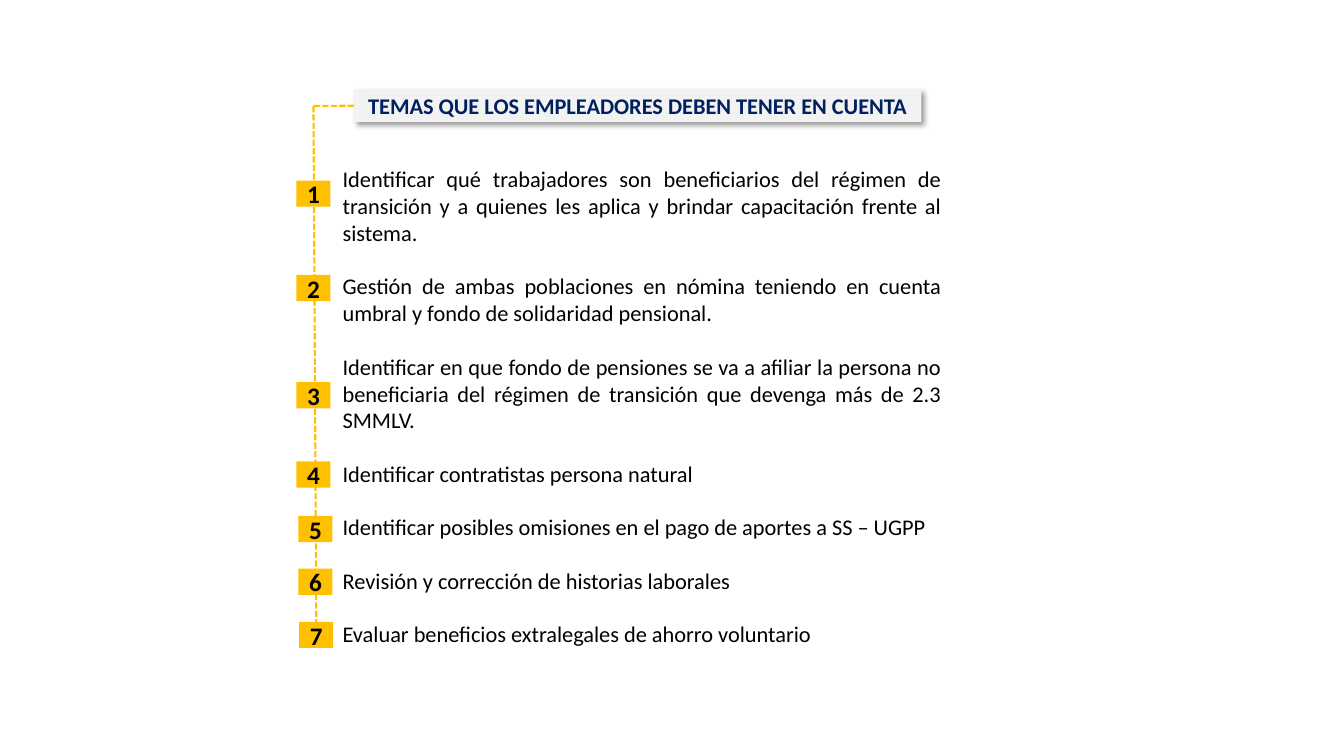
from lxml import etree
from pptx import Presentation
from pptx.dml.color import RGBColor
from pptx.enum.dml import MSO_LINE
from pptx.enum.shapes import MSO_CONNECTOR, MSO_SHAPE
from pptx.enum.text import MSO_ANCHOR, MSO_AUTO_SIZE, PP_ALIGN
from pptx.oxml import parse_xml
from pptx.oxml.ns import qn
from pptx.util import Cm, Pt

RECT = MSO_SHAPE.RECTANGLE
LINE = MSO_CONNECTOR.STRAIGHT
DASH = MSO_LINE.SQUARE_DOT
MIDDLE = MSO_ANCHOR.MIDDLE
FIXED = MSO_AUTO_SIZE.NONE
CENTER = PP_ALIGN.CENTER
JUSTIFY = PP_ALIGN.JUSTIFY
GOLD = "FFC000"
NS = 'xmlns:a="http://schemas.openxmlformats.org/drawingml/2006/main"'


def paint(fmt, color):
    fmt.solid()
    fmt.fore_color.rgb = RGBColor.from_string(color)


def style(par, size, color, bold, align):
    par.alignment = align
    for run in par.runs:
        run.font.name = "Calibri"
        run.font.size = Pt(size)
        run.font.bold = bold
        paint(run.font.fill, color)


deck = Presentation()
deck.slide_width = Cm(33.87)
deck.slide_height = Cm(19.05)
slide = deck.slides.add_slide(deck.slide_layouts[1])
shapes = slide.shapes

title = shapes.title
title.left, title.top, title.width, title.height = Cm(8.92), Cm(2.26), Cm(14.3), Cm(0.81)
title.element.spPr.append(parse_xml(f'<a:prstGeom {NS} prst="roundRect"><a:avLst/></a:prstGeom>'))
paint(title.fill, "F2F2F2")
title.element.spPr.append(parse_xml(
    f'<a:effectLst {NS}><a:outerShdw blurRad="50800" dist="38100" dir="2700000" algn="tl" rotWithShape="0">'
    '<a:srgbClr val="000000"><a:alpha val="40000"/></a:srgbClr></a:outerShdw></a:effectLst>'))
frame = title.text_frame
frame.text = "TEMAS QUE LOS EMPLEADORES DEBEN TENER EN CUENTA"
frame.auto_size = FIXED
frame.vertical_anchor = MIDDLE
style(frame.paragraphs[0], 16, "002060", True, CENTER)

topics = [
    (7.47, 4.55, "Identificar qué trabajadores son beneficiarios del régimen de transición y a quienes les aplica y brindar capacitación frente al sistema."),
    (7.47, 6.93, "Gestión de ambas poblaciones en nómina teniendo en cuenta umbral y fondo de solidaridad pensional."),
    (7.47, 9.63, "Identificar en que fondo de pensiones se va a afiliar la persona no beneficiaria del régimen de transición que devenga más de 2.3 SMMLV."),
    (7.47, 11.63, "Identificar contratistas persona natural"),
    (7.52, 13, "Identificar posibles omisiones en el pago de aportes a SS – UGPP"),
    (7.52, 14.33, "Revisión y corrección de historias laborales"),
    (7.54, 15.67, "Evaluar beneficios extralegales de ahorro voluntario"),
]

body = slide.placeholders[1]
body.left, body.top, body.width, body.height = Cm(8.38), Cm(4.04), Cm(15.6), Cm(12.57)
frame = body.text_frame
frame.text = "\n".join(text for left, top, text in topics)
frame.auto_size = FIXED
for num, par in enumerate(frame.paragraphs):
    props = par._p.get_or_add_pPr()
    props.set("marL", "0")
    props.set("indent", "0")
    etree.SubElement(props, qn("a:buNone"))
    par.space_before = Pt(19 if num else 0)
    style(par, 16, "000000", False, JUSTIFY)

branch = shapes.add_connector(LINE, Cm(8.92), Cm(2.67), Cm(7.9), Cm(2.67))
branch.begin_connect(title, 1)
trunk = shapes.add_connector(LINE, Cm(7.9), Cm(2.67), Cm(7.97), Cm(15.67))
for line in (branch, trunk):
    paint(line.line.fill, GOLD)
    line.line.width = Pt(1.5)
    line.line.dash_style = DASH
    etree.SubElement(line.element.spPr, qn("a:effectLst"))

for num, (left, top, text) in enumerate(topics, 1):
    badge = shapes.add_shape(RECT, Cm(left), Cm(top), Cm(0.86), Cm(0.66))
    badge.shadow.inherit = False
    paint(badge.fill, GOLD)
    badge.line.fill.background()
    badge.text_frame.text = str(num)
    badge.text_frame.vertical_anchor = MIDDLE
    style(badge.text_frame.paragraphs[0], 18, "000000", True, CENTER)
trunk.end_connect(badge, 0)

deck.save("out.pptx")
